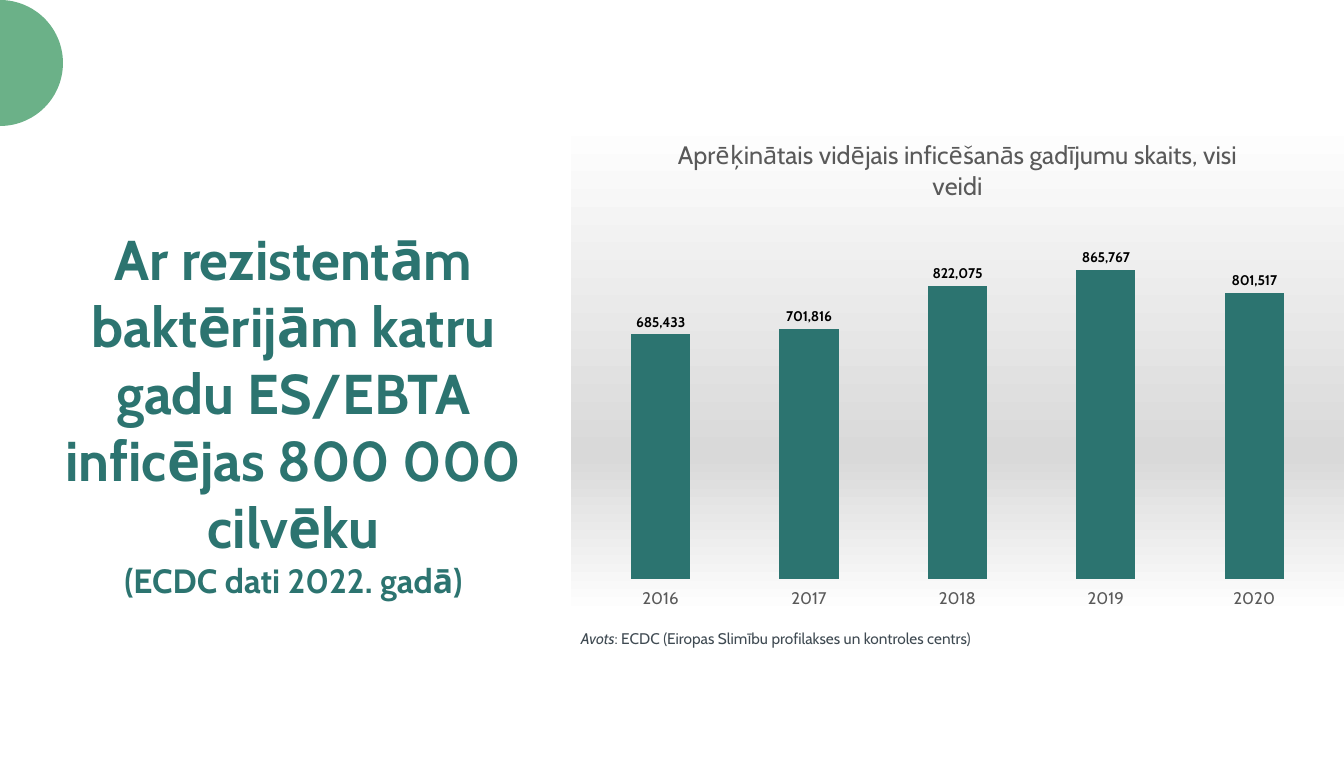
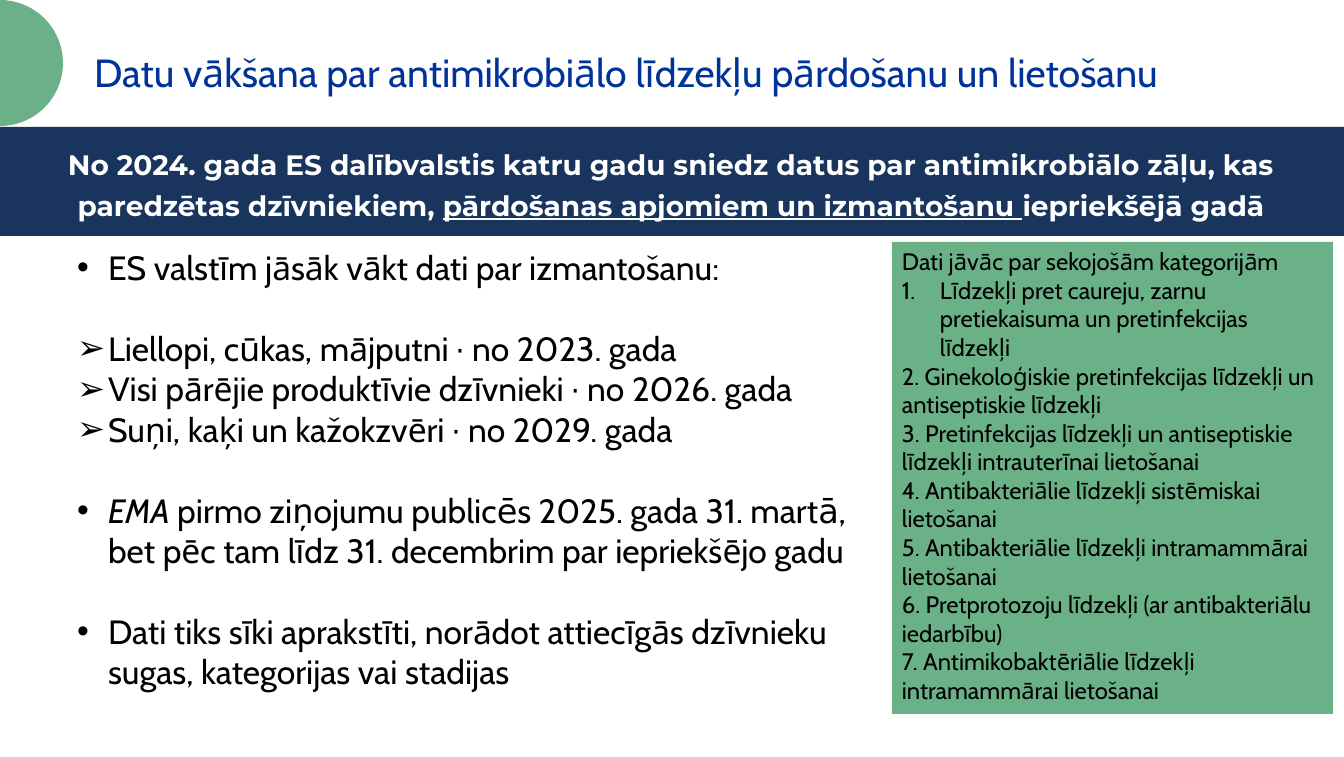
import math

from pptx import Presentation
from pptx.chart.data import CategoryChartData
from pptx.dml.color import RGBColor
from pptx.enum.chart import XL_CHART_TYPE, XL_LABEL_POSITION, XL_TICK_LABEL_POSITION, XL_TICK_MARK
from pptx.enum.shapes import MSO_SHAPE
from pptx.enum.text import MSO_ANCHOR, MSO_AUTO_SIZE, PP_ALIGN
from pptx.oxml.xmlchemy import OxmlElement
from pptx.util import Pt

COLUMN = XL_CHART_TYPE.COLUMN_CLUSTERED
OUTSIDE_END = XL_LABEL_POSITION.OUTSIDE_END
LABELS_LOW = XL_TICK_LABEL_POSITION.LOW
NO_TICK = XL_TICK_MARK.NONE
RECT = MSO_SHAPE.RECTANGLE
TOP, MIDDLE = MSO_ANCHOR.TOP, MSO_ANCHOR.MIDDLE
GROW, FIXED = MSO_AUTO_SIZE.SHAPE_TO_FIT_TEXT, MSO_AUTO_SIZE.NONE
LEFT, CENTER = PP_ALIGN.LEFT, PP_ALIGN.CENTER

WHITE = RGBColor(0xFF, 0xFF, 0xFF)
BLACK = RGBColor(0x00, 0x00, 0x00)
GREEN = RGBColor(0x6B, 0xB1, 0x88)
TEAL = RGBColor(0x2C, 0x74, 0x70)
NAVY = RGBColor(0x19, 0x35, 0x5D)
BLUE = RGBColor(0x00, 0x33, 0x99)
SLATE = RGBColor(0x3F, 0x4A, 0x52)
GREY = RGBColor(0x59, 0x59, 0x59)
SILVER = RGBColor(0xD9, 0xD9, 0xD9)

EMU_PER_PX = 914400 / 100.8
WIDTH, HEIGHT = 1344, 757
BODY_FONT, BAND_FONT = "Cabin", "Montserrat"
TITLE_ONLY, TITLE_AND_BODY = 5, 1
PARAGRAPH_GAP = 29


def emu(px):
    return round(px * EMU_PER_PX)


def add_xml(parent, tag, **attributes):
    child = OxmlElement(tag)
    for name, value in attributes.items():
        child.set(name, str(value))
    parent.append(child)
    return child


def set_font(font, color=None, **values):
    for name, value in values.items():
        setattr(font, name, Pt(value) if name == "size" else value)
    if color is not None:
        font.color.rgb = color


def para(*runs, **values):
    return {"runs": [(r, {}) if isinstance(r, str) else r for r in runs], **values}


class Deck:
    def __init__(self):
        self.prs = Presentation()
        self.prs.slide_width, self.prs.slide_height = emu(WIDTH), emu(HEIGHT)
        self.s = None

    def slide(self, layout):
        self.s = self.prs.slides.add_slide(self.prs.slide_layouts[layout])
        self.corner(63)

    def corner(self, radius, steps=60):
        angles = [math.pi * (i / steps - 0.5) for i in range(steps + 1)]
        points = [(emu(radius * math.cos(a)), emu(radius * (1 + math.sin(a)))) for a in angles]
        builder = self.s.shapes.build_freeform(*points[0])
        builder.add_line_segments(points[1:], close=True)
        self.paint(builder.convert_to_shape(), GREEN)

    def paint(self, sp, color):
        sp.shadow.inherit = False
        sp.fill.solid()
        sp.fill.fore_color.rgb = color
        sp.line.fill.background()

    def place(self, sp, box):
        for name, px in zip(("left", "top", "width", "height"), box):
            setattr(sp, name, emu(px))
        return sp

    def set_text(self, sp, paragraphs, font, align=LEFT, anchor=TOP, fit=FIXED, spacing=1.0):
        tf = sp.text_frame
        for name, value in {"word_wrap": True, "auto_size": fit, "vertical_anchor": anchor}.items():
            setattr(tf, name, value)
        for i, item in enumerate(paragraphs):
            p = tf.add_paragraph() if i else tf.paragraphs[0]
            formats = {"alignment": align, "line_spacing": spacing,
                       "space_before": Pt(item.get("before", 0)), "space_after": Pt(0)}
            for name, value in formats.items():
                setattr(p, name, value)
            self.bullet(p, item)
            for text, changes in item["runs"]:
                r = p.add_run()
                r.text = text
                set_font(r.font, **{**font, **item.get("font", {}), **changes})

    def bullet(self, p, item):
        if "indent" not in item:
            return
        pPr = p._p.get_or_add_pPr()
        pPr.set("marL", str(emu(item["indent"])))
        pPr.set("indent", str(-emu(item["indent"])))
        if "bullet" in item:
            add_xml(pPr, "a:buChar", char=item["bullet"])
        else:
            add_xml(pPr, "a:buAutoNum", type="arabicPeriod")

    def title(self, box, paragraphs, font, **options):
        self.set_text(self.place(self.s.shapes.title, box), paragraphs, font, **options)

    def body(self, box, paragraphs, font):
        self.set_text(self.place(self.s.placeholders[1], box), paragraphs, font)

    def text(self, box, paragraphs, font, **options):
        sp = self.s.shapes.add_textbox(*map(emu, box))
        self.set_text(sp, paragraphs, font, **options)

    def panel(self, box, color, paragraphs, font, **options):
        sp = self.s.shapes.add_shape(RECT, *map(emu, box))
        self.paint(sp, color)
        self.set_text(sp, paragraphs, font, **options)

    def column_chart(self, box, title, cats, vals):
        data = CategoryChartData(number_format="#,##0")
        data.categories = cats
        data.add_series("Series 1", vals)
        chart = self.s.shapes.add_chart(COLUMN, *map(emu, box), data).chart
        set_font(chart.font, name=BODY_FONT, size=10, color=BLACK)
        chart.has_legend = False
        chart.has_title = True
        r = chart.chart_title.text_frame.paragraphs[0].add_run()
        r.text = title
        set_font(r.font, name=BODY_FONT, size=18, color=GREY, bold=False)

        plot = chart.plots[0]
        plot.gap_width, plot.overlap, plot.vary_by_categories = 150, -25, False
        fill = plot.series[0].format.fill
        fill.solid()
        fill.fore_color.rgb = TEAL
        plot.has_data_labels = True
        labels = plot.data_labels
        labels.show_value, labels.position = True, OUTSIDE_END
        labels.number_format, labels.number_format_is_linked = "#,##0", False
        set_font(labels.font, name=BODY_FONT, size=10, bold=True, color=BLACK)

        axis = chart.category_axis
        axis.major_tick_mark = axis.minor_tick_mark = NO_TICK
        axis.tick_label_position = LABELS_LOW
        axis.format.line.fill.background()
        set_font(axis.tick_labels.font, name=BODY_FONT, size=12, color=GREY)
        axis = chart.value_axis
        axis.minimum_scale, axis.maximum_scale = 0, 1000000
        axis.has_major_gridlines = axis.visible = False
        self.chart_layout(chart, {"x": 0.02, "y": 0.21, "w": 0.96, "h": 0.72})
        self.chart_gradient(chart, ((0, WHITE), (68, SILVER), (100, WHITE)))

    def chart_layout(self, chart, fractions):
        area = chart.element.chart.plotArea
        for old in area.findall(area.tag.replace("plotArea", "layout")):
            area.remove(old)
        layout = OxmlElement("c:layout")
        area.insert(0, layout)
        manual = add_xml(layout, "c:manualLayout")
        add_xml(manual, "c:layoutTarget", val="inner")
        for name in "xy":
            add_xml(manual, f"c:{name}Mode", val="edge")
        for name, value in fractions.items():
            add_xml(manual, f"c:{name}", val=value)

    def chart_gradient(self, chart, stops):
        spPr = OxmlElement("c:spPr")
        chart.element.chart.addnext(spPr)
        grad = add_xml(spPr, "a:gradFill", rotWithShape=1)
        stop_list = add_xml(grad, "a:gsLst")
        for percent, color in stops:
            add_xml(add_xml(stop_list, "a:gs", pos=percent * 1000), "a:srgbClr", val=color)
        add_xml(grad, "a:lin", ang=90 * 60000, scaled=0)
        add_xml(add_xml(spPr, "a:ln"), "a:noFill")


def infections_slide(deck):
    deck.slide(TITLE_ONLY)
    deck.title((33, 219, 521, 322), [
        para("Ar rezistentām baktērijām katru gadu ES/EBTA inficējas 800 000 cilvēku"),
        para("(ECDC dati 2022. gadā)", font={"size": 24}),
    ], {"name": BODY_FONT, "size": 40, "bold": True, "color": TEAL}, align=CENTER, fit=GROW)
    deck.column_chart((571, 118, 773, 496),
                      "Aprēķinātais vidējais inficēšanās gadījumu skaits, visi veidi",
                      ("2016", "2017", "2018", "2019", "2020"),
                      (685433, 701816, 822075, 865767, 801517))
    deck.text((571, 624, 672, 29), [
        para(("Avots", {"italic": True}), ": ECDC (Eiropas Slimību profilakses un kontroles centrs)"),
    ], {"name": BODY_FONT, "size": 11, "color": SLATE}, fit=GROW)


def data_slide(deck):
    deck.slide(TITLE_AND_BODY)
    deck.panel((-2, 127, 1346, 109), NAVY, [
        para("No 2024. gada ES dalībvalstis katru gadu sniedz datus par antimikrobiālo zāļu, "
             "kas paredzētas dzīvniekiem, ",
             ("pārdošanas apjomiem un izmantošanu ", {"underline": True}),
             "iepriekšējā gadā"),
    ], {"name": BAND_FONT, "size": 20, "bold": True, "color": WHITE},
        align=CENTER, anchor=MIDDLE, spacing=1.2)
    deck.title((84, 34, 1134, 58), [
        para("Datu vākšana par antimikrobiālo līdzekļu pārdošanu un lietošanu"),
    ], {"name": BODY_FONT, "size": 28, "color": BLUE}, spacing=1.2)

    dot = {"bullet": "•", "indent": 31}
    arrow = {"bullet": "➢", "indent": 31}
    deck.body((67, 242, 811, 472), [
        para("ES valstīm jāsāk vākt dati par izmantošanu:", **dot),
        para("Liellopi, cūkas, mājputni → no 2023. gada", before=PARAGRAPH_GAP, **arrow),
        para("Visi pārējie produktīvie dzīvnieki → no 2026. gada", **arrow),
        para("Suņi, kaķi un kažokzvēri → no 2029. gada", **arrow),
        para(("EMA ", {"italic": True}),
             "pirmo ziņojumu publicēs 2025. gada 31. martā, "
             "bet pēc tam līdz 31. decembrim par iepriekšējo gadu", before=PARAGRAPH_GAP, **dot),
        para("Dati tiks sīki aprakstīti, norādot attiecīgās dzīvnieku sugas, "
             "kategorijas vai stadijas", before=PARAGRAPH_GAP, **dot),
    ], {"name": BODY_FONT, "size": 24, "color": BLACK})

    deck.panel((892, 242, 441, 472), GREEN, [
        para("Dati jāvāc par sekojošām kategorijām"),
        para("Līdzekļi pret caureju, zarnu pretiekaisuma un pretinfekcijas līdzekļi", indent=38),
        para("2. Ginekoloģiskie pretinfekcijas līdzekļi un antiseptiskie līdzekļi"),
        para("3. Pretinfekcijas līdzekļi un antiseptiskie līdzekļi intrauterīnai lietošanai"),
        para("4. Antibakteriālie līdzekļi sistēmiskai lietošanai"),
        para("5. Antibakteriālie līdzekļi intramammārai lietošanai"),
        para("6. Pretprotozoju līdzekļi (ar antibakteriālu iedarbību)"),
        para("7. Antimikobaktēriālie līdzekļi intramammārai lietošanai"),
    ], {"name": BODY_FONT, "size": 17, "color": BLACK}, fit=GROW)


def main():
    deck = Deck()
    infections_slide(deck)
    data_slide(deck)
    deck.prs.save("out.pptx")


if __name__ == "__main__":
    main()
